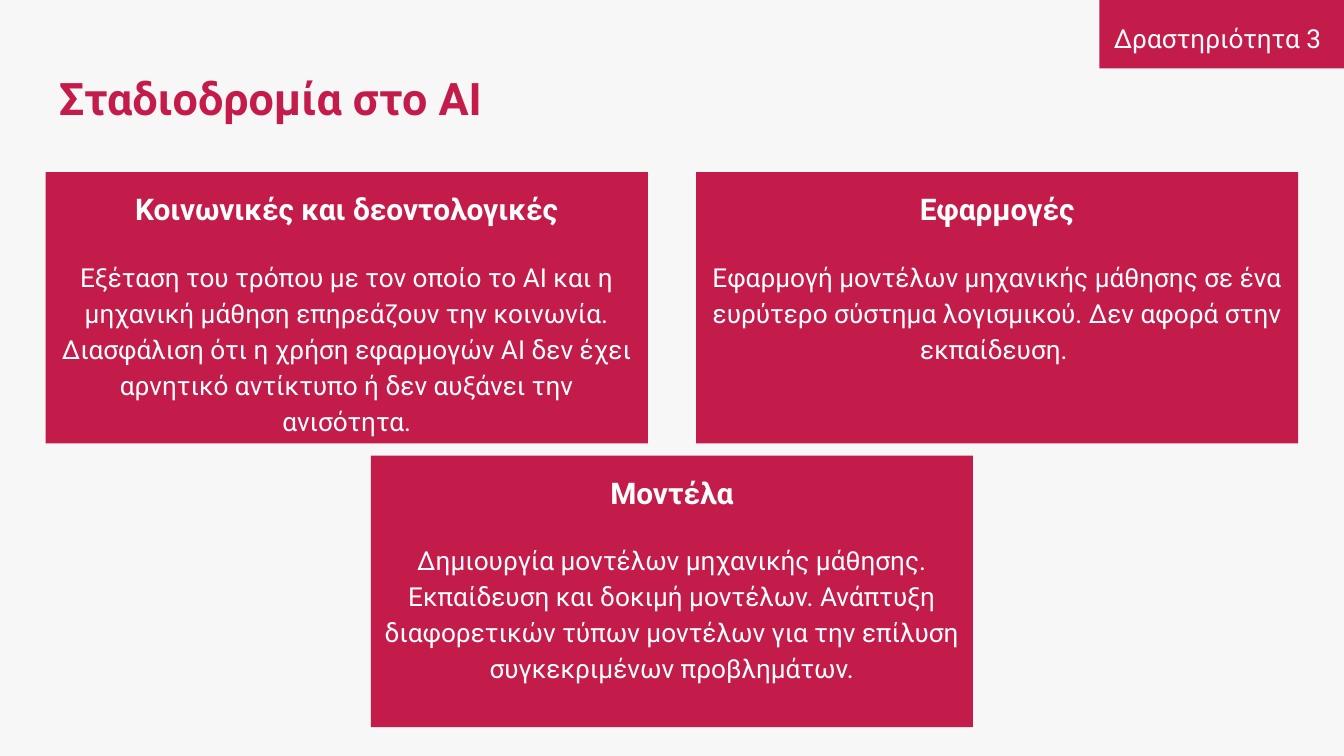
"""Build the slide on careers in AI."""
import pptx
import pptx.dml.color
import pptx.enum.shapes
import pptx.enum.text
import pptx.util

Inches = pptx.util.Inches
Pt = pptx.util.Pt
RGBColor = pptx.dml.color.RGBColor
ALIGN = pptx.enum.text.PP_ALIGN
ANCHOR = pptx.enum.text.MSO_ANCHOR
RECT = pptx.enum.shapes.MSO_SHAPE.RECTANGLE

RED = RGBColor(0xC3, 0x1C, 0x4A)
WHITE = RGBColor(0xFF, 0xFF, 0xFF)
PALE = RGBColor(0xF7, 0xF7, 0xF7)


def write(shape, text, size=14, bold=False, color=WHITE, align=ALIGN.CENTER,
          anchor=ANCHOR.TOP, line=1.15, before=0, after=0):
    frame = shape.text_frame
    frame.word_wrap = True
    frame.vertical_anchor = anchor
    frame.margin_left = frame.margin_right = Inches(0.1)
    frame.margin_top = frame.margin_bottom = Inches(0.1)
    para = frame.paragraphs[0] if not frame.text else frame.add_paragraph()
    para.alignment = align
    para.line_spacing = line
    para.space_before = Pt(before)
    para.space_after = Pt(after)
    run = para.add_run()
    run.text = text
    run.font.name = "Roboto"
    run.font.size = Pt(size)
    run.font.bold = bold
    run.font.color.rgb = color


def block(left, top, width, height):
    shape = slide.shapes.add_shape(
        RECT, Inches(left), Inches(top), Inches(width), Inches(height))
    shape.shadow.inherit = False
    shape.fill.solid()
    shape.fill.fore_color.rgb = RED
    shape.line.fill.background()
    return shape


deck = pptx.Presentation()
deck.slide_width = Inches(10)
deck.slide_height = Inches(10) * 9 // 16
slide = deck.slides.add_slide(deck.slide_layouts[6])
slide.background.fill.solid()
slide.background.fill.fore_color.rgb = PALE

block(8.18, 0, 1.82, 0.51)

title = slide.shapes.add_textbox(
    Inches(0.34), Inches(0.35), Inches(9.32), Inches(0.76))
write(title, "Σταδιοδρομία στο AI", size=24, bold=True, color=RED,
      align=ALIGN.LEFT, anchor=ANCHOR.MIDDLE, line=1.0)

cards = [
    (0.34, 1.28, "Κοινωνικές και δεοντολογικές",
     "Εξέταση του τρόπου με τον οποίο το AI και η μηχανική μάθηση "
     "επηρεάζουν την κοινωνία. Διασφάλιση ότι η χρήση εφαρμογών AI δεν έχει "
     "αρνητικό αντίκτυπο ή δεν αυξάνει την ανισότητα."),
    (5.18, 1.28, "Εφαρμογές",
     "Εφαρμογή μοντέλων μηχανικής μάθησης σε ένα ευρύτερο σύστημα "
     "λογισμικού. Δεν αφορά στην εκπαίδευση. "),
    (2.76, 3.39, "Μοντέλα",
     "Δημιουργία μοντέλων μηχανικής μάθησης. Εκπαίδευση και δοκιμή μοντέλων. "
     "Ανάπτυξη διαφορετικών τύπων μοντέλων για την επίλυση συγκεκριμένων "
     "προβλημάτων."),
]
for left, top, head, body in cards:
    card = block(left, top, 4.48, 2.02)
    write(card, head, size=16, bold=True)
    write(card, body, before=16)

label = slide.shapes.add_textbox(
    Inches(8.18), Inches(0.03), Inches(1.76), Inches(0.42))
write(label, "Δραστηριότητα 3", after=16)

deck.save("out.pptx")
